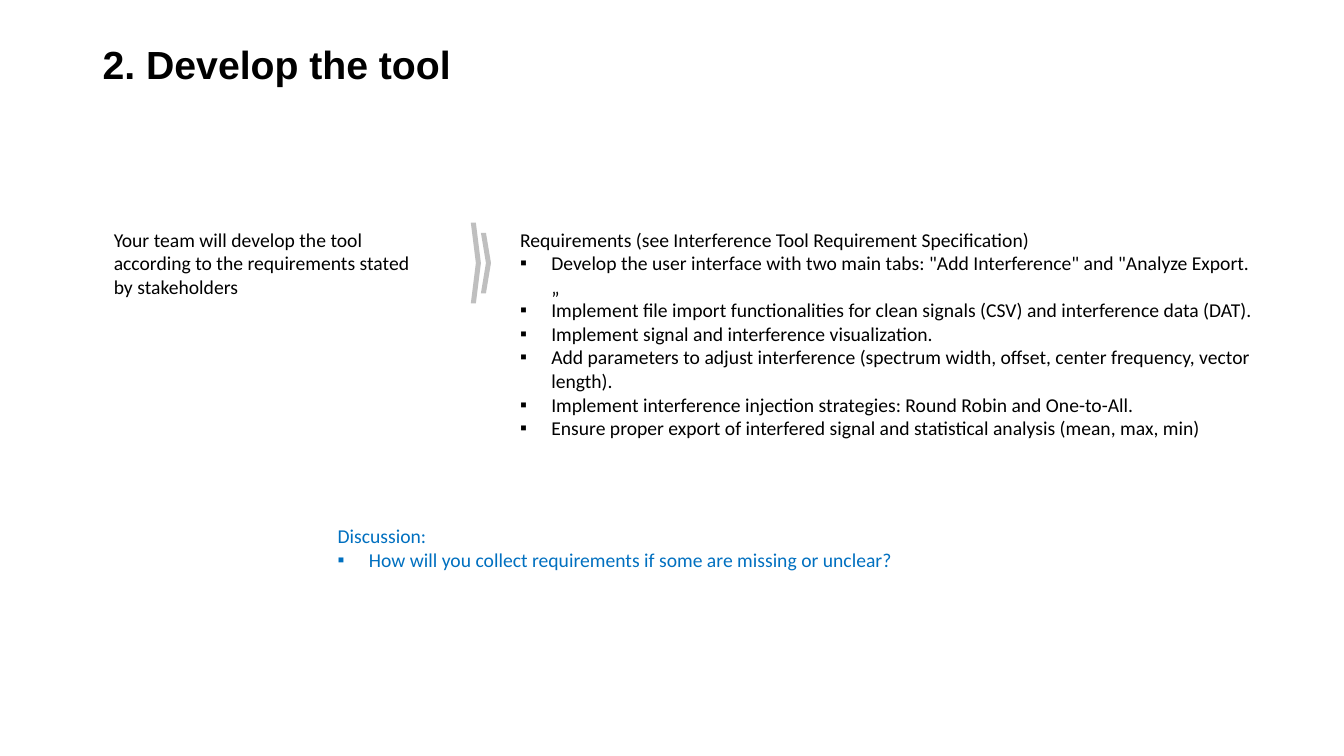
"""Build the slide on developing the tool from its requirements."""
from dataclasses import dataclass

from lxml import etree
from pptx import Presentation
from pptx import util as u
from pptx.dml.color import RGBColor
from pptx.enum import shapes, text
from pptx.oxml import ns

COLORS = {"ink": "000000", "discussion": "0070C0", "chevron": "BFBFBF"}
CELL = u.Inches(0.1)
INDENT = u.Inches(0.31)


@dataclass(frozen=True)
class Area:
    column: float
    row: float
    columns: float
    rows: float

    def lengths(self) -> list[u.Emu]:
        cells = (self.column, self.row, self.columns, self.rows)
        return [u.Emu(round(count * CELL)) for count in cells]


@dataclass(frozen=True)
class TextBlock:
    area: Area
    lead: str
    bullets: tuple[str, ...] = ()
    color: str = "ink"
    font: str = "Calibri"
    size: int = 14
    bold: bool = False
    line_spacing: float = 1.0


BLOCKS = (
    TextBlock(Area(9.2, 4, 115, 14.5), "2. Develop the tool",
              font="Arial", size=28, bold=True, line_spacing=0.9),
    TextBlock(Area(10.3, 22.1, 33.5, 14.5),
              "Your team will develop the tool according to the requirements stated by stakeholders"),
    TextBlock(
        Area(50.6, 22.1, 75, 23.2),
        "Requirements (see Interference Tool Requirement Specification)",
        (
            'Develop the user interface with two main tabs: "Add Interference" and "Analyze Export.„',
            "Implement file import functionalities for clean signals (CSV) and interference data (DAT).",
            "Implement signal and interference visualization.",
            "Add parameters to adjust interference (spectrum width, offset, center frequency, vector length).",
            "Implement interference injection strategies: Round Robin and One-to-All.",
            "Ensure proper export of interfered signal and statistical analysis (mean, max, min)",
        ),
    ),
    TextBlock(Area(32.5, 51.5, 73.7, 10.3), "Discussion:",
              ("How will you collect requirements if some are missing or unclear?",),
              color="discussion"),
)
CHEVRONS = (Area(46.7, 22.1, 1, 8), Area(47.7, 23.1, 1, 6))


def add_bullet(para) -> None:
    properties = para._p.get_or_add_pPr()
    properties.set("marL", str(INDENT))
    properties.set("indent", str(-INDENT))
    etree.SubElement(properties, ns.qn("a:buFont"), typeface="Arial")
    etree.SubElement(properties, ns.qn("a:buChar"), char="▪")


def draw_text(page, block: TextBlock) -> None:
    box = page.shapes.add_textbox(*block.area.lengths())
    frame = box.text_frame
    frame.word_wrap = True
    frame.vertical_anchor = text.MSO_ANCHOR.TOP
    for index, line in enumerate((block.lead, *block.bullets)):
        para = frame.add_paragraph() if index else frame.paragraphs[0]
        if index:
            add_bullet(para)
        para.line_spacing = block.line_spacing
        span = para.add_run()
        span.text = line
        span.font.name = block.font
        span.font.size = u.Pt(block.size)
        span.font.bold = block.bold
        span.font.color.rgb = RGBColor.from_string(COLORS[block.color])


def draw_chevron(group, area: Area) -> None:
    chevron = group.shapes.add_shape(shapes.MSO_SHAPE.CHEVRON, *area.lengths())
    chevron.shadow.inherit = False
    chevron.fill.solid()
    chevron.fill.fore_color.rgb = RGBColor.from_string(COLORS["chevron"])
    chevron.line.fill.background()


def main() -> None:
    deck = Presentation()
    deck.slide_width, deck.slide_height = u.Inches(13.33), u.Inches(7.5)
    page = deck.slides.add_slide(deck.slide_layouts[6])
    for block in BLOCKS:
        draw_text(page, block)
    group = page.shapes.add_group_shape()
    for area in CHEVRONS:
        draw_chevron(group, area)
    deck.save("out.pptx")


if __name__ == "__main__":
    main()
